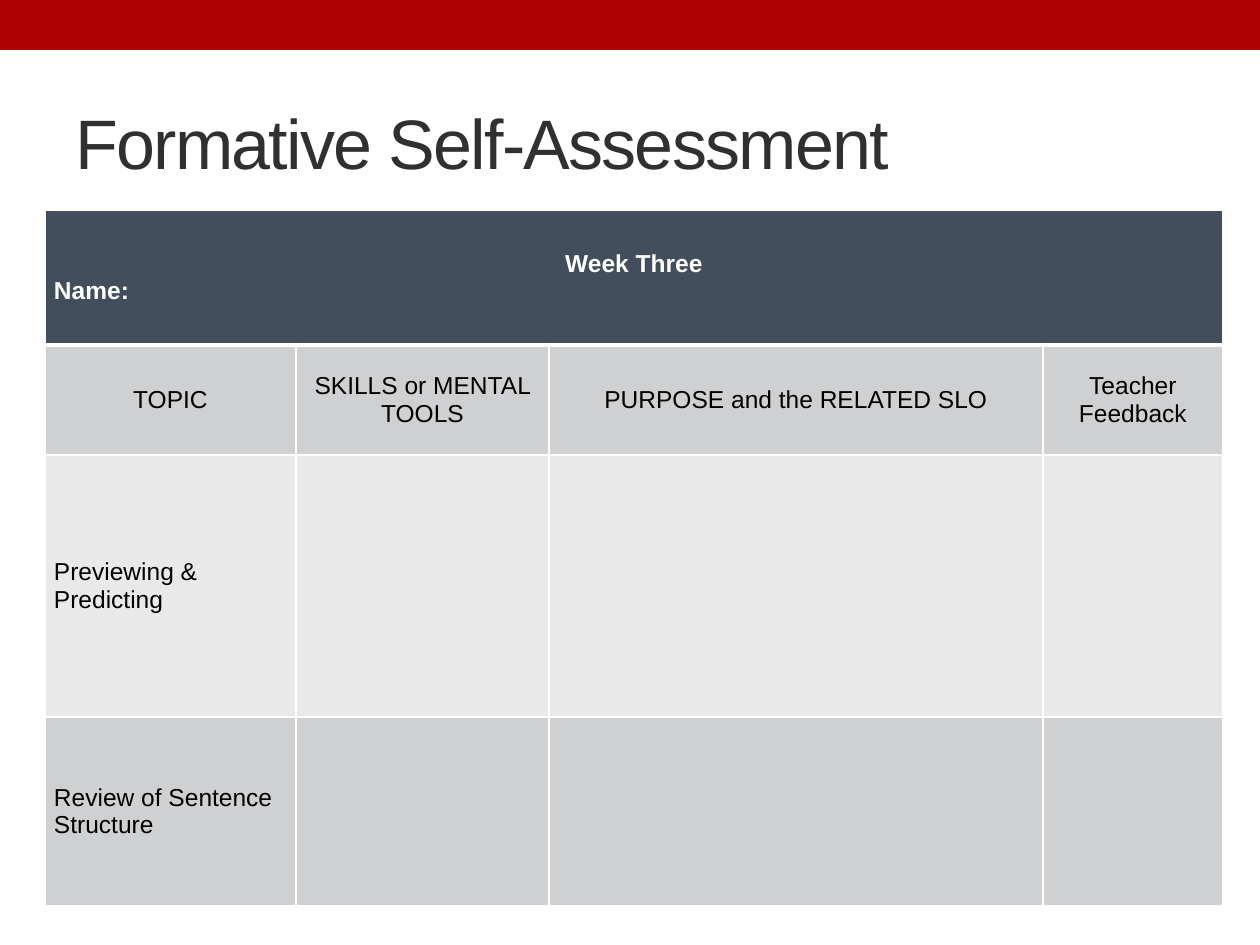
from lxml.etree import SubElement
from pptx import Presentation
from pptx.dml.color import RGBColor
from pptx.enum.shapes import MSO_SHAPE
from pptx.enum.text import MSO_ANCHOR, PP_ALIGN
from pptx.oxml import parse_xml
from pptx.oxml.ns import nsdecls
from pptx.util import Emu, Pt

PX = 914400 / 126
LEFT, CENTER = PP_ALIGN.LEFT, PP_ALIGN.CENTER


def color(value):
    return RGBColor.from_string(value)


def write(frame, text, size=14, ink="000000", bold=False, aligns=(LEFT,), spacing=None):
    frame.text = text
    for paragraph, align in zip(frame.paragraphs, aligns):
        paragraph.alignment = align
        paragraph.font.size = Pt(size)
        for run in paragraph.runs:
            run.font.name = "Arial"
            run.font.size = Pt(size)
            run.font.bold = bold
            run.font.color.rgb = color(ink)
            if spacing is not None:
                run._r.get_or_add_rPr().set("spc", str(spacing))


prs = Presentation()
prs.slide_width, prs.slide_height = Emu(int(1260 * PX)), Emu(int(945 * PX))
slide = prs.slides.add_slide(prs.slide_layouts[5])

banner = slide.shapes.add_shape(MSO_SHAPE.RECTANGLE, 0, 0, prs.slide_width, Emu(int(50 * PX)))
banner.shadow.inherit = False
banner.fill.solid()
banner.fill.fore_color.rgb = color("AD0101")
banner.line.fill.background()

title = slide.shapes.title
title.left, title.top, title.width, title.height = (Emu(int(n * PX)) for n in (63, 73, 1134, 136))
title.text_frame.vertical_anchor = MSO_ANCHOR.MIDDLE
write(title.text_frame, "Formative Self-Assessment", size=40, ink="303030", spacing=-100)

column_widths = [251, 253, 494, 180]
row_heights = [135, 110, 262, 189]
row_fills = ["424E5B", "CFD0D2", "E9E9EA", "CFD0D2"]
contents = [
    ["Week Three\nName:", "", "", ""],
    ["TOPIC", "SKILLS or MENTAL TOOLS", "PURPOSE and the RELATED SLO", "Teacher Feedback"],
    ["Previewing & Predicting", "", "", ""],
    ["Review of Sentence Structure", "", "", ""],
]
row_formats = [
    {"ink": "FFFFFF", "bold": True, "aligns": (CENTER, LEFT)},
    {"aligns": (CENTER,)},
    {},
    {},
]

assessment = slide.shapes.add_table(
    len(row_heights), len(column_widths), Emu(int(45 * PX)), Emu(int(210 * PX)),
    Emu(int(sum(column_widths) * PX)), Emu(int(sum(row_heights) * PX))).table
for column, width in zip(assessment.columns, column_widths):
    column.width = Emu(int(width * PX))
for row, height in zip(assessment.rows, row_heights):
    row.height = Emu(int(height * PX))
assessment.cell(0, 0).merge(assessment.cell(0, len(column_widths) - 1))

for r, texts in enumerate(contents):
    for c, text in enumerate(texts):
        cell = assessment.cell(r, c)
        cell.vertical_anchor = MSO_ANCHOR.MIDDLE
        cell.margin_left = cell.margin_right = Emu(int(9 * PX))
        cell.margin_top = cell.margin_bottom = Emu(int(5 * PX))
        for side in "LRTB":
            heavy = (r, side) in ((0, "B"), (1, "T"))
            border = SubElement(cell._tc.get_or_add_tcPr(),
                                parse_xml(f"<a:ln{side} {nsdecls('a')}/>").tag,
                                w=str(Pt(3 if heavy else 1)))
            border.append(parse_xml(
                f'<a:solidFill {nsdecls("a")}><a:srgbClr val="FFFFFF"/></a:solidFill>'))
        cell.fill.solid()
        cell.fill.fore_color.rgb = color(row_fills[r])
        write(cell.text_frame, text, **row_formats[r])

prs.save("out.pptx")
